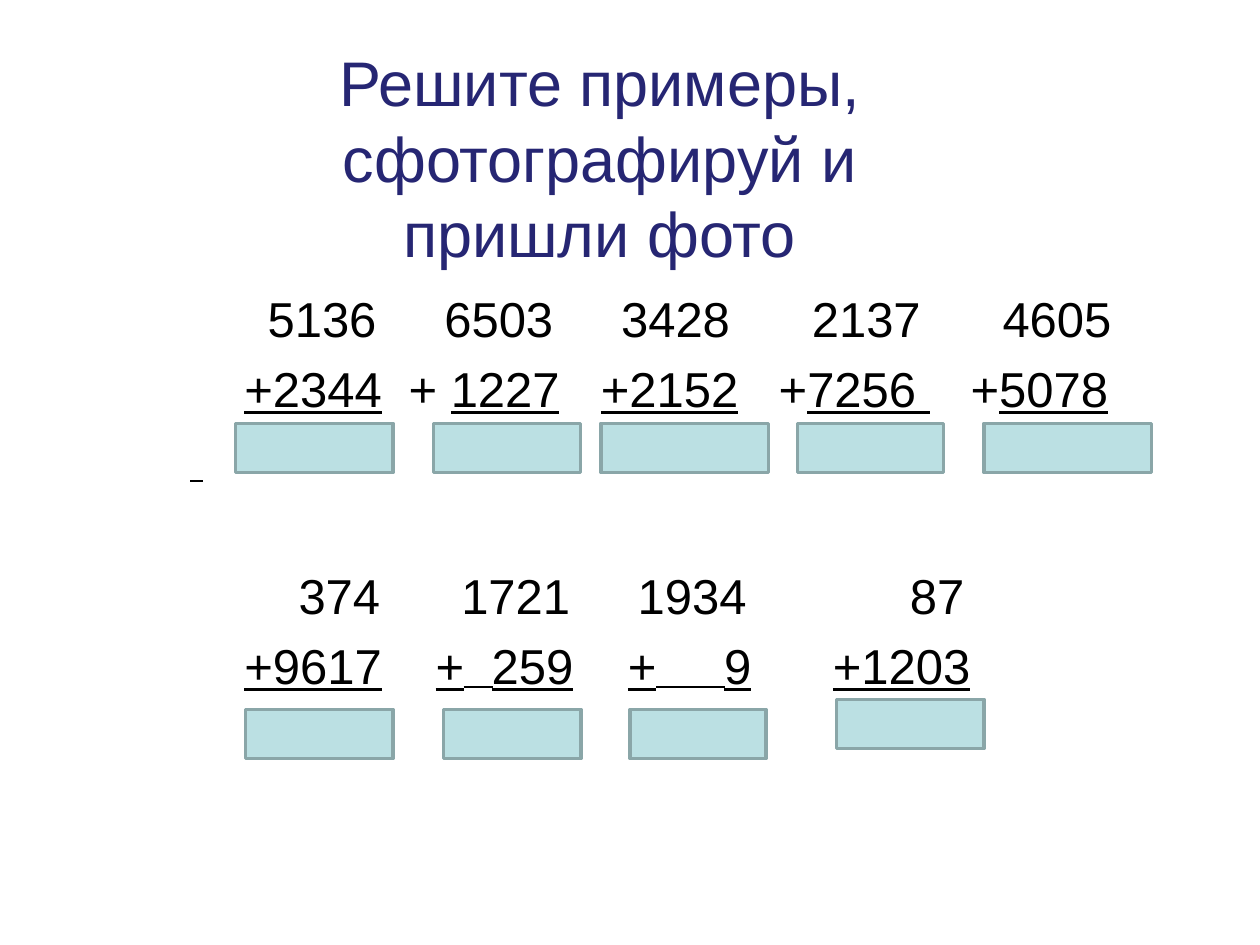
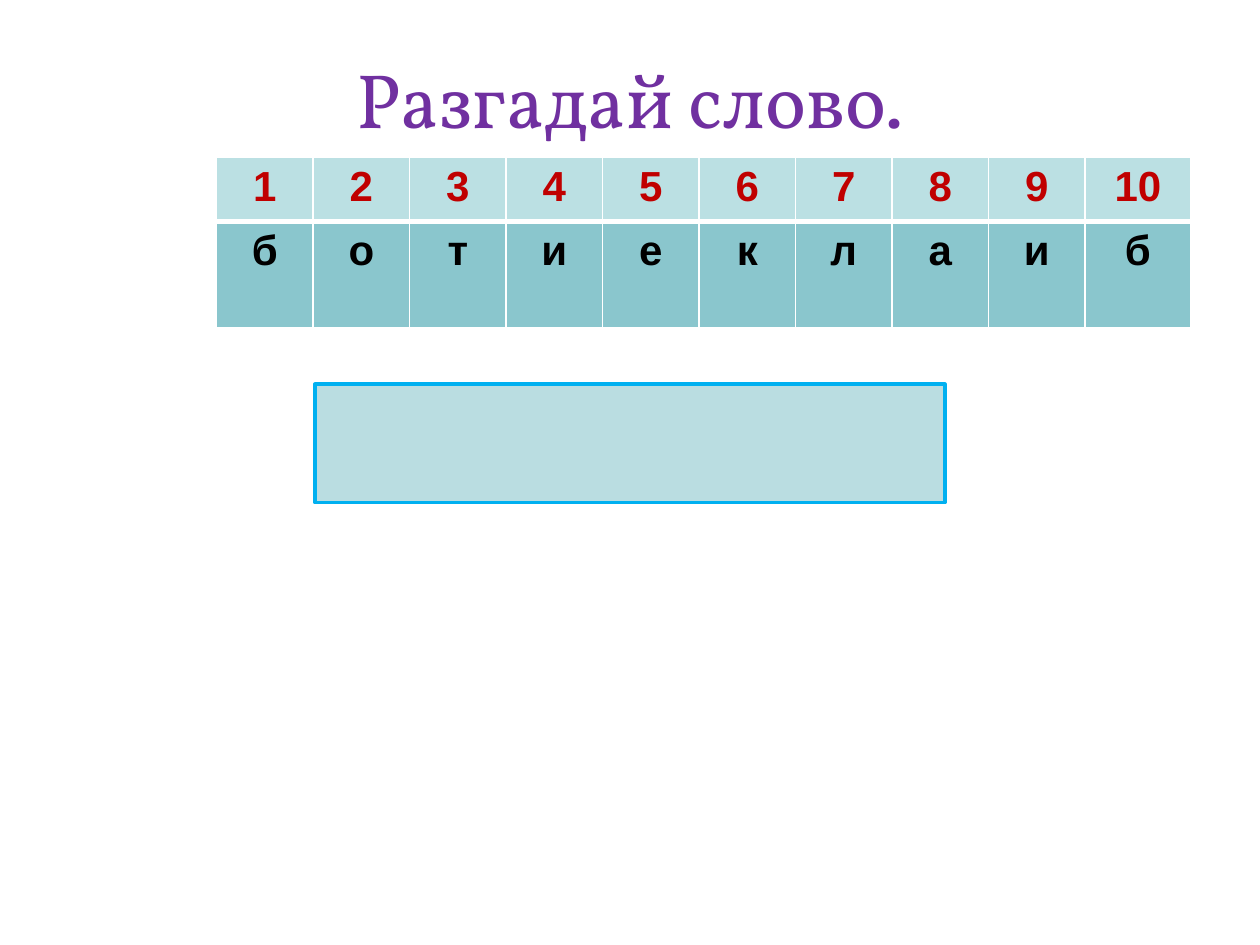
from dataclasses import dataclass

from lxml.etree import SubElement
from pptx import Presentation
from pptx.dml.color import RGBColor
from pptx.enum.shapes import MSO_CONNECTOR, MSO_SHAPE
from pptx.enum.text import MSO_ANCHOR, MSO_AUTO_SIZE, PP_ALIGN
from pptx.oxml.ns import qn
from pptx.util import Pt


@dataclass(frozen=True)
class Theme:
    body_font: str = "Arial"
    word_font: str = "Vollkorn"
    navy: str = "262673"
    purple: str = "7030A0"
    red: str = "C00000"
    black: str = "000000"
    white: str = "FFFFFF"
    pale: str = "BBE0E3"
    teal: str = "8AC6CD"
    answer_line: str = "8AA6A8"
    word_fill: str = "BADDE1"
    word_line: str = "00B0F0"
    task_size: float = 36
    word_size: float = 44
    sum_size: float = 28
    cell_size: float = 24


THEME = Theme()

# Each row of sums: space before, tab stops, then (text, underlined) spans.
SUM_ROWS = [
    (0, [44.3, 145.3, 246.3, 355.3, 464.3],
     [("\t5136\t6503\t3428\t2137\t4605", False)]),
    (6.2, [31, 124.9, 234.7, 336.4, 446],
     [("\t", False), ("+2344", True), ("\t+ ", False), ("1227", True),
      ("\t", False), ("+2152", True), ("\t+", False), ("7256 ", True),
      ("\t+", False), ("5078", True)]),
    (84.6, [62, 155, 255.8, 411.4],
     [("\t374\t1721\t1934\t87", False)]),
    (6.2, [31, 140.4, 172.4, 250.2, 305.2, 367.3],
     [("\t", False), ("+9617", True), ("\t", False), ("+", True),
      ("\t", False), ("259", True), ("\t", False), ("+", True),
      ("\t", False), ("9", True), ("\t", False), ("+1203", True)]),
]

# Start, end and height of each rule that underlines a gap in the sums.
GAP_RULES = [(7.1, 14.5, 162.6), (163.5, 180, 280.3), (273.5, 312.8, 280.3)]

# Left, top and width of each answer box, relative to the box of sums.
ANSWER_HEIGHT = 28.1
ANSWERS = [
    (33.1, 129.6, 90), (146.2, 129.6, 84.2), (241.9, 129.6, 95.8),
    (354.3, 129.6, 83.5), (460.8, 129.6, 95.8),
    (38.9, 293.1, 84.2), (151.9, 293.1, 78.5), (258.5, 293.1, 77.8),
    (376.6, 287.3, 84.2),
]

LETTERS = "ботиеклаиб"
COLUMN_WIDTH, LAST_COLUMN_WIDTH = 55.15, 60.5
ROW_HEIGHTS = (36.7, 60.8)


def add_text(para, text, *, size, color, font=THEME.body_font,
             bold=False, underline=False, align=None):
    if align is not None:
        para.alignment = align
    span = para.add_run()
    span.text = text
    span.font.name = font
    span.font.size = Pt(size)
    span.font.bold = bold
    span.font.underline = underline
    span.font.color.rgb = RGBColor.from_string(color)


def set_tabs(para, stops):
    tabs = SubElement(para._p.get_or_add_pPr(), qn("a:tabLst"))
    for stop in stops:
        SubElement(tabs, qn("a:tab"), pos=str(Pt(stop)), algn="l")


def add_page(deck, title, box, **text_format):
    page = deck.slides.add_slide(deck.slide_layouts[5])
    holder = page.shapes.title
    holder.left, holder.top, holder.width, holder.height = map(Pt, box)
    frame = holder.text_frame
    frame.word_wrap = True
    frame.auto_size = MSO_AUTO_SIZE.NONE
    frame.vertical_anchor = MSO_ANCHOR.MIDDLE
    add_text(frame.paragraphs[0], title, align=PP_ALIGN.CENTER, **text_format)
    return page


def add_rectangle(page, box, fill, line):
    shape = page.shapes.add_shape(MSO_SHAPE.RECTANGLE, *map(Pt, box))
    shape.shadow.inherit = False
    shape.fill.solid()
    shape.fill.fore_color.rgb = RGBColor.from_string(fill)
    shape.line.color.rgb = RGBColor.from_string(line)
    shape.line.width = Pt(2)


def add_sums(page, box):
    frame = page.shapes.add_textbox(*map(Pt, box)).text_frame
    frame.word_wrap = True
    frame.margin_top = Pt(52.7)
    for index, (space, stops, spans) in enumerate(SUM_ROWS):
        para = frame.add_paragraph() if index else frame.paragraphs[0]
        para.space_before = Pt(space)
        set_tabs(para, stops)
        for text, underline in spans:
            add_text(para, text, size=THEME.sum_size, color=THEME.black,
                     underline=underline)


def add_gap_rules(page, box):
    left, top = box[:2]
    for start, end, y in GAP_RULES:
        rule = page.shapes.add_connector(
            MSO_CONNECTOR.STRAIGHT, Pt(left + start), Pt(top + y),
            Pt(left + end), Pt(top + y))
        rule.line.color.rgb = RGBColor.from_string(THEME.black)
        rule.line.width = Pt(1.5)
        SubElement(rule._element.spPr, qn("a:effectLst"))


def add_answers(page, box):
    left, top = box[:2]
    for x, y, width in ANSWERS:
        add_rectangle(page, (left + x, top + y, width, ANSWER_HEIGHT),
                      THEME.pale, THEME.answer_line)


def set_border(cell, side, width):
    line = SubElement(cell._tc.get_or_add_tcPr(), qn(f"a:ln{side}"),
                      w=str(Pt(width)))
    fill = SubElement(line, qn("a:solidFill"))
    SubElement(fill, qn("a:srgbClr"), val=THEME.white)


def add_letter_table(page, left, top):
    count = len(LETTERS)
    widths = [COLUMN_WIDTH] * (count - 1) + [LAST_COLUMN_WIDTH]
    table = page.shapes.add_table(
        2, count, Pt(left), Pt(top), Pt(sum(widths)), Pt(sum(ROW_HEIGHTS))).table
    for column, width in zip(table.columns, widths):
        column.width = Pt(width)
    for row, height in zip(table.rows, ROW_HEIGHTS):
        row.height = Pt(height)
    numbers = [str(number) for number in range(1, count + 1)]
    styles = [
        (numbers, THEME.red, THEME.pale, {"L": 1, "R": 1, "T": 1, "B": 3}),
        (LETTERS, THEME.black, THEME.teal, {"L": 1, "R": 1, "T": 3, "B": 1}),
    ]
    for row, (texts, color, fill, borders) in enumerate(styles):
        for column, text in enumerate(texts):
            cell = table.cell(row, column)
            for side, width in borders.items():
                set_border(cell, side, width)
            cell.fill.solid()
            cell.fill.fore_color.rgb = RGBColor.from_string(fill)
            add_text(cell.text_frame.paragraphs[0], text, bold=True,
                     size=THEME.cell_size, color=color, align=PP_ALIGN.CENTER)


def build_sums_page(deck):
    page = add_page(deck, "Решите примеры, сфотографируй и пришли фото",
                    (134.6, 78.5, 416.2, 22.3),
                    size=THEME.task_size, color=THEME.navy)
    box = (101.5, 112.3, 582.5, 370.1)
    add_sums(page, box)
    add_gap_rules(page, box)
    add_answers(page, box)


def build_word_page(deck):
    page = add_page(deck, "Разгадай слово.", (36, 21.6, 648, 68.4),
                    size=THEME.word_size, color=THEME.purple,
                    font=THEME.word_font)
    add_letter_table(page, 123.8, 90)
    add_rectangle(page, (180, 219.6, 360, 67.7),
                  THEME.word_fill, THEME.word_line)


def main():
    deck = Presentation()
    deck.slide_width, deck.slide_height = Pt(720), Pt(540)
    build_sums_page(deck)
    build_word_page(deck)
    deck.save("out.pptx")


if __name__ == "__main__":
    main()
